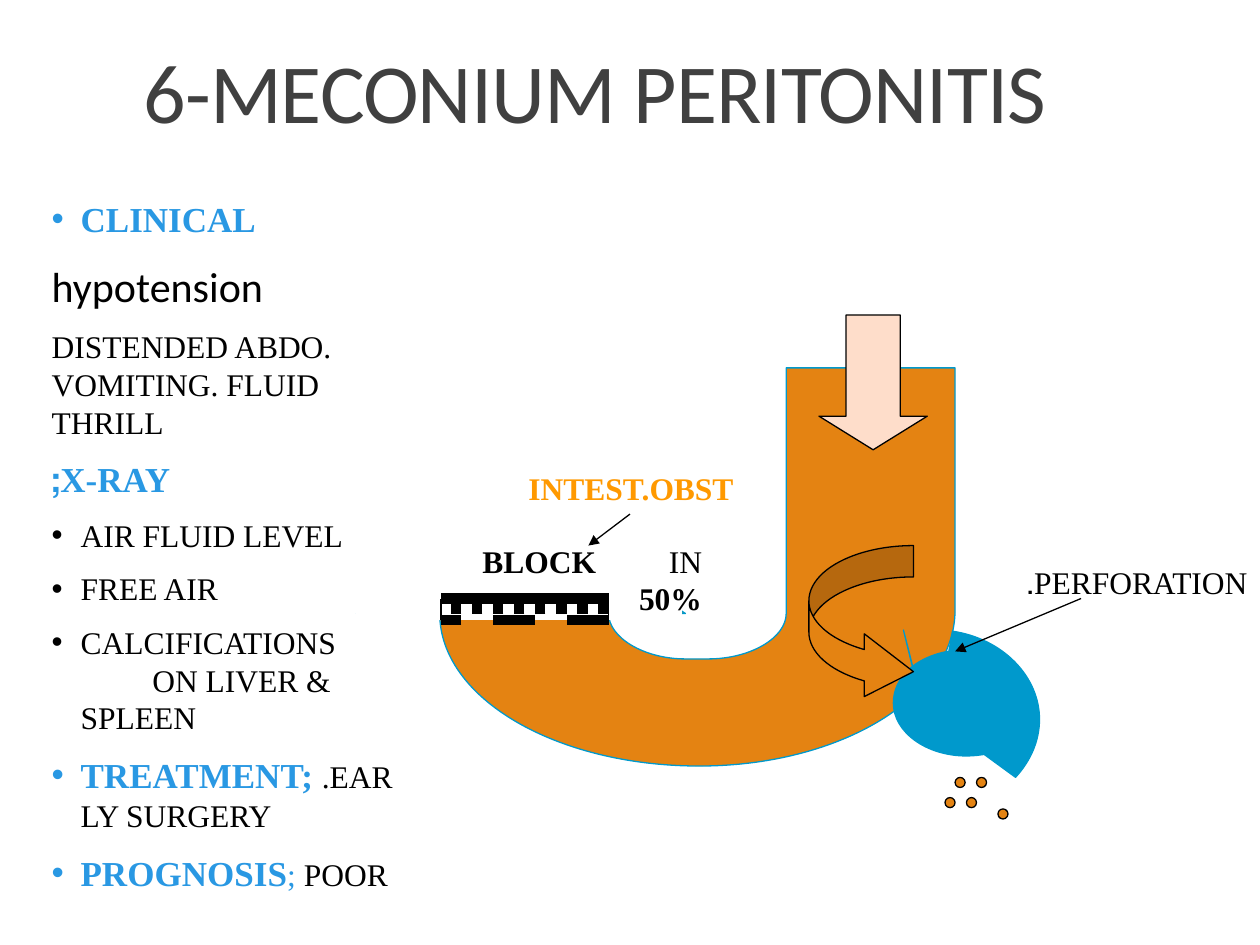
from lxml.etree import SubElement
from pptx import Presentation
from pptx.dml.color import RGBColor
from pptx.enum.dml import MSO_LINE
from pptx.enum.shapes import MSO_CONNECTOR, MSO_SHAPE
from pptx.enum.text import MSO_ANCHOR, MSO_AUTO_SIZE, PP_ALIGN
from pptx.oxml.ns import qn
from pptx.oxml.xmlchemy import OxmlElement
from pptx.util import Inches, Pt

SERIF, SANS = "Times New Roman", "Calibri"
BLACK, WHITE, BLUE = "000000", "FFFFFF", "2998E3"
ORANGE, TEAL, PEACH, AMBER = "E48312", "0099CC", "FEDDCA", "FF9900"

TITLE = "6-MECONIUM PERITONITIS"
HEAD = (20, BLUE, True, SERIF)
ITEM = (18, BLACK, False, SERIF)
BODY = [
    ("bullet", [("CLINICAL", *HEAD)]),
    ("plain", [("hypotension", 24, BLACK, False, SANS)]),
    ("plain", [("DISTENDED ABDO. VOMITING. FLUID THRILL", *ITEM)]),
    ("rtl", [("X-RAY;", *HEAD)]),
    ("bullet", [("AIR FLUID LEVEL", *ITEM)]),
    ("bullet", [("FREE AIR", *ITEM)]),
    ("bullet", [("CALCIFICATIONS\n\tON LIVER & SPLEEN", *ITEM)]),
    ("bullet", [("TREATMENT; ", *HEAD), (".EARLY SURGERY", *ITEM)]),
    ("bullet", [("PROGNOSIS", *HEAD), ("; ", 18, BLUE, False, SERIF), ("POOR", *ITEM)]),
]
LABELS = [
    ((3.5, 4.25, 1.33, 0.4), [("BLOCK", 18, BLACK, True, SERIF)]),
    ((4, 3.67, 1.92, 0.7), [("INTEST.OBST", 18, AMBER, True, SERIF)]),
    ((7.83, 4.42, 2.17, 0.4), [("PERFORATION.", *ITEM)]),
    ((4.67, 4.25, 1, 0.4), [("IN ", *ITEM), ("50%", 18, BLACK, True, SERIF)]),
]
BOWEL = [(4.14, 3.99), (2.83, 4.87), (3.49, 4.87), (3.49, 5.54, 4.41, 6.08, 5.55, 6.08),
         (6.67, 6.08, 7.58, 5.53, 7.58, 4.84), (7.58, 2.92), (6.24, 2.92), (6.24, 4.87),
         (6.24, 5.06, 5.96, 5.23, 5.62, 5.23), (5.44, 5.23),
         (5.11, 5.23, 4.83, 5.06, 4.83, 4.87), (5.44, 4.87)]
SLIT = [(7.17, 5), (7.17, 5, 7.25, 5.31, 7.25, 5.32), (7.25, 5.33, 7.17, 5, 7.17, 5)]
TEAR = [(7.62, 5.08), (7.65, 5.17, 7.64, 5.1, 7.59, 5.16),
        (7.57, 5.18, 7.51, 5.33, 7.51, 5.34), (7.49, 5.39, 7.45, 5.4, 7.42, 5.44)]
LEAKS = [
    [(8.06, 6.17), (8.18, 6.04, 8.25, 5.88, 8.25, 5.71),
     (8.25, 5.37, 7.96, 5.07, 7.56, 5.01), (7.43, 5.71)],
    [(8.2, 5.76), (8.1, 5.91, 7.89, 6, 7.67, 6), (7.35, 6, 7.09, 5.81, 7.09, 5.58),
     (7.09, 5.38, 7.26, 5.22, 7.52, 5.17), (7.67, 5.58)],
]
DROPS = [(7.75, 6.17), (7.58, 6.17), (7.67, 6.33), (7.5, 6.33), (7.92, 6.42)]
BLOCK_LEFT, BLOCK_RIGHT, BLOCK_TOP, BLOCK_BOTTOM = 3.5, 4.83, 4.75, 4.92
BANDS = [(4.83, MSO_LINE.ROUND_DOT), (BLOCK_TOP, None)]
POINTERS = [((8.58, 4.75), (7.58, 5.17)), ((5, 4.08), (4.67, 4.33))]


def rgb(value):
    return RGBColor.from_string(value)


def place(sp, box):
    sp.left, sp.top, sp.width, sp.height = map(Inches, box)


def paint(sp, fill, line):
    sp.shadow.inherit = False
    if fill:
        sp.fill.solid()
        sp.fill.fore_color.rgb = rgb(fill)
    else:
        sp.fill.background()
    sp.line.color.rgb = rgb(line)
    sp.line.width = Pt(0.75)


def shape(kind, box, fill, line=BLACK, adjustments=()):
    sp = s.shapes.add_shape(kind, *map(Inches, box))
    paint(sp, fill, line)
    for i, value in enumerate(adjustments):
        sp.adjustments[i] = value


def outline(segments, fill, line, close=True):
    ends = [(Inches(seg[-2]), Inches(seg[-1])) for seg in segments]
    builder = s.shapes.build_freeform(*ends[0], scale=1.0)
    builder.add_line_segments(ends[1:], close=close)
    sp = builder.convert_to_shape()
    for step, seg in zip(list(sp._element.iter(qn("a:lnTo"))), segments[1:]):
        if len(seg) == 6:
            curve = OxmlElement("a:cubicBezTo")
            for x, y in zip(seg[::2], seg[1::2]):
                SubElement(curve, qn("a:pt"), x=str(Inches(x) - sp.left),
                           y=str(Inches(y) - sp.top))
            step.getparent().replace(step, curve)
    paint(sp, fill, line)


def connect(start, end, width=0.75, dash=None, arrow=False):
    c = s.shapes.add_connector(MSO_CONNECTOR.STRAIGHT, *map(Inches, (*start, *end)))
    c.line.color.rgb = rgb(BLACK)
    c.line.width = Pt(width)
    if dash:
        c.line.dash_style = dash
    if arrow:
        SubElement(c.line._get_or_add_ln(), qn("a:tailEnd"), type="triangle")
    SubElement(c._element.spPr, qn("a:effectLst"))


def write(p, runs):
    for text, size, color, bold, font in runs:
        for i, part in enumerate(text.split("\n")):
            if i:
                p.add_line_break()
            r = p.add_run()
            r.text = part
            r.font.size, r.font.bold, r.font.name = Pt(size), bold, font
            r.font.color.rgb = rgb(color)


def fill_body(tf):
    for i, (style, runs) in enumerate(BODY):
        p = tf.paragraphs[0] if i == 0 else tf.add_paragraph()
        p.alignment = PP_ALIGN.LEFT
        p.line_spacing = 1.0
        p.space_before = Pt(runs[0][1] / 2 if i else 0)
        p.space_after = Pt(0)
        write(p, runs)
        pPr = p._p.get_or_add_pPr()
        indent = Inches(0.23) if style == "bullet" else 0
        pPr.set("marL", str(indent))
        pPr.set("indent", str(-indent))
        if style == "bullet":
            SubElement(pPr, qn("a:buFont"), typeface="Arial")
            SubElement(pPr, qn("a:buChar"), char="•")
            tabs = SubElement(pPr, qn("a:tabLst"))
            SubElement(tabs, qn("a:tab"), pos=str(Inches(0.8)), algn="l")
        else:
            SubElement(pPr, qn("a:buNone"))
        if style == "rtl":
            pPr.set("rtl", "1")


prs = Presentation()
prs.slide_width, prs.slide_height = Inches(10), Inches(7.5)
s = prs.slides.add_slide(prs.slide_layouts[1])

title, body = s.placeholders
place(title, (1.04, -0.42, 8.25, 1.59))
tf = title.text_frame
tf.vertical_anchor = MSO_ANCHOR.BOTTOM
tf.auto_size = MSO_AUTO_SIZE.NONE
p = tf.paragraphs[0]
p.alignment = PP_ALIGN.LEFT
p.line_spacing = 0.85
write(p, [(TITLE, 48, "404040", False, SANS)])
p.runs[0].font._element.set("spc", "-50")

place(body, (0.31, 1.52, 2.92, 5.59))
body.fill.solid()
body.fill.fore_color.rgb = rgb(WHITE)
body.text_frame.auto_size = MSO_AUTO_SIZE.NONE
fill_body(body.text_frame)

outline(BOWEL, ORANGE, TEAL)
shape(MSO_SHAPE.DOWN_ARROW, (6.5, 2.5, 0.86, 1.07), PEACH, adjustments=(0.5, 0.31))
shape(MSO_SHAPE.RECTANGLE, (2.83, 3.92, 2.58, 1), WHITE, WHITE)
connect((BLOCK_RIGHT, BLOCK_BOTTOM), (BLOCK_LEFT, BLOCK_BOTTOM), 6, MSO_LINE.DASH)
outline(SLIT, ORANGE, TEAL)
outline(TEAR, None, WHITE, close=False)
for leak in LEAKS:
    outline(leak, TEAL, TEAL)
shape(MSO_SHAPE.CURVED_RIGHT_ARROW, (6.42, 4.33, 0.83, 1.25), ORANGE,
      adjustments=(0.3, 0.6, 0.47))
for x, y in DROPS:
    shape(MSO_SHAPE.OVAL, (x, y, 0.08, 0.08), ORANGE)
for y, dash in BANDS:
    connect((BLOCK_RIGHT, y), (BLOCK_LEFT, y), 6, dash)
for x in (BLOCK_LEFT, BLOCK_RIGHT):
    connect((x, BLOCK_TOP), (x, BLOCK_BOTTOM))

for box, runs in LABELS:
    tf = s.shapes.add_textbox(*map(Inches, box)).text_frame
    tf.word_wrap = True
    p = tf.paragraphs[0]
    p.alignment = PP_ALIGN.RIGHT
    p._p.get_or_add_pPr().set("rtl", "1")
    write(p, runs)
for start, end in POINTERS:
    connect(start, end, arrow=True)

prs.save("out.pptx")
